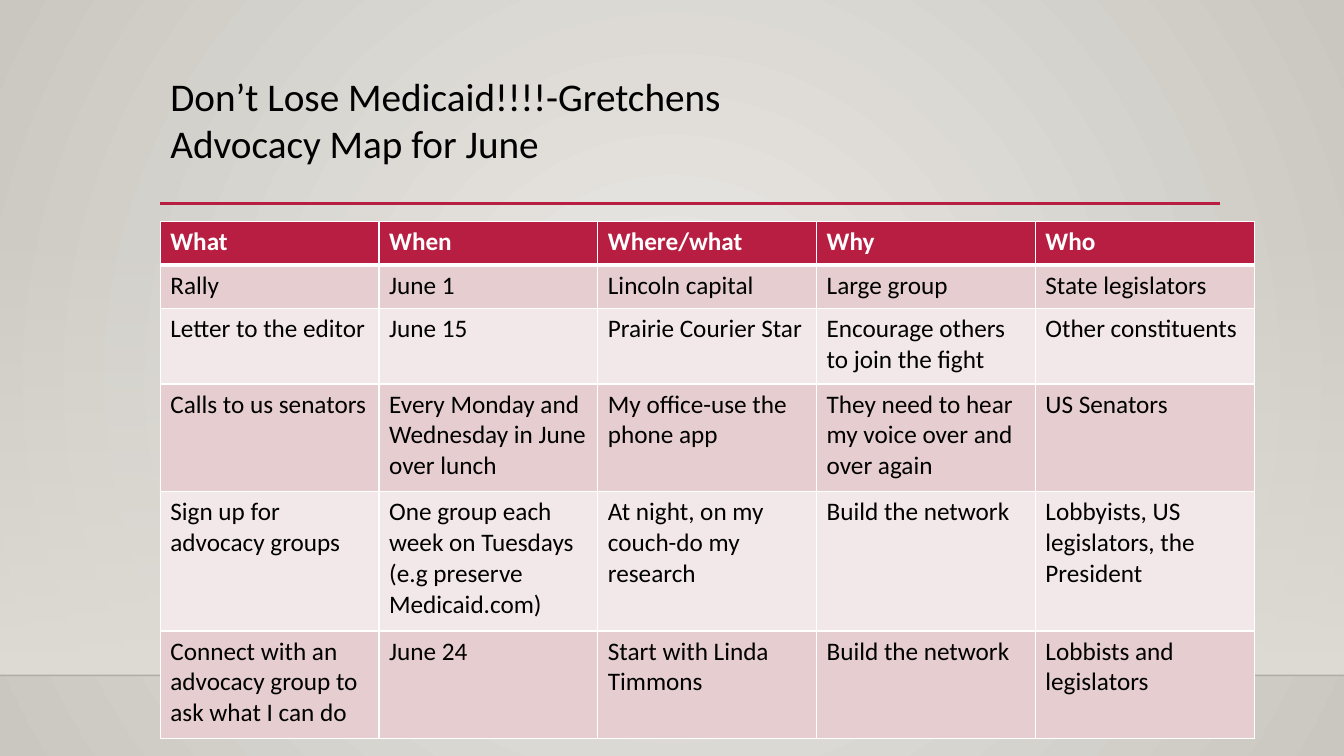
from lxml import etree
from pptx import Presentation
from pptx.dml.color import RGBColor
from pptx.enum.shapes import MSO_CONNECTOR, MSO_SHAPE
from pptx.enum.text import MSO_ANCHOR, MSO_AUTO_SIZE, PP_ALIGN
from pptx.oxml import parse_xml
from pptx.oxml.ns import nsdecls, qn
from pptx.util import Inches, Pt

TITLE = "Don’t Lose Medicaid!!!!-Gretchens Advocacy Map for June"
ROWS = [
    ("What", "When", "Where/what", "Why", "Who"),
    ("Rally", "June 1", "Lincoln capital", "Large group", "State legislators"),
    ("Letter to the editor", "June 15", "Prairie Courier Star",
     "Encourage others to join the fight", "Other constituents"),
    ("Calls to us senators", "Every Monday and Wednesday in June over lunch",
     "My office-use the phone app",
     "They need to hear my voice over and over again", "US Senators"),
    ("Sign up for advocacy groups",
     "One group each week on Tuesdays\n(e.g preserve Medicaid.com)",
     "At night, on my couch-do my research", "Build the network",
     "Lobbyists, US legislators, the President"),
    ("Connect with an advocacy group to ask what I can do", "June 24",
     "Start with Linda Timmons", "Build the network", "Lobbists and legislators"),
]
ROW_HEIGHTS = (0.43, 0.43, 0.75, 1.07, 1.38, 1.07)
COLUMN_WIDTH = 2.17
LEFT = 1.59
WIDTH, HEIGHT = 13.33, 7.5
FLOOR = 6.7
FONT = "Calibri"

CRIMSON = RGBColor(0xB7, 0x1E, 0x42)
PINK = RGBColor(0xE6, 0xCD, 0xCF)
PALE_PINK = RGBColor(0xF3, 0xE8, 0xE9)
WHITE = RGBColor(0xFF, 0xFF, 0xFF)
BLACK = RGBColor(0, 0, 0)
NEAR_BLACK = RGBColor(0, 0, 1)
CENTER_GREY = RGBColor(0xEC, 0xEA, 0xE7)
EDGE_GREY = RGBColor(0xCA, 0xC7, 0xC1)
WALL_GREY = RGBColor(0xDF, 0xDB, 0xD5)

RADIAL = ('<a:path path="circle"><a:fillToRect l="50000" t="50000" '
          'r="50000" b="50000"/></a:path>')
DOWNWARD = '<a:lin ang="5400000" scaled="0"/>'


def set_gradient(properties, stops, direction):
    stop_xml = "".join(
        f'<a:gs pos="{position * 1000}"><a:srgbClr val="{color}">'
        f'<a:alpha val="{alpha * 1000}"/></a:srgbClr></a:gs>'
        for position, color, alpha in stops)
    gradient = parse_xml(f'<a:gradFill {nsdecls("a")} rotWithShape="1">'
                         f'<a:gsLst>{stop_xml}</a:gsLst>{direction}</a:gradFill>')
    solid = properties.find(qn("a:solidFill"))
    properties.replace(solid, gradient)


def add_line(slide, left, right, top, color, width):
    line = slide.shapes.add_connector(
        MSO_CONNECTOR.STRAIGHT, Inches(left), Inches(top), Inches(right), Inches(top))
    line.line.color.rgb = color
    line.line.width = Pt(width)
    etree.SubElement(line._element.spPr, qn("a:effectLst"))
    return line


def set_borders(cell, widths):
    properties = cell._tc.get_or_add_tcPr()
    for index, (side, width) in enumerate(zip("LRTB", widths)):
        properties.insert(index, parse_xml(
            f'<a:ln{side} {nsdecls("a")} w="{Pt(width)}"><a:solidFill>'
            f'<a:srgbClr val="{WHITE}"/></a:solidFill></a:ln{side}>'))


def format_text(text_frame, size, color, bold=False):
    for paragraph in text_frame.paragraphs:
        paragraph.alignment = PP_ALIGN.LEFT
        for run in paragraph.runs:
            run.font.name = FONT
            run.font.size = Pt(size)
            run.font.bold = bold
            run.font.color.rgb = color


def add_backdrop(slide):
    slide.background.fill.solid()
    set_gradient(slide._element.find(".//" + qn("p:bgPr")),
                 [(0, CENTER_GREY, 100), (100, EDGE_GREY, 100)], RADIAL)
    wall = slide.shapes.add_shape(MSO_SHAPE.RECTANGLE, 0, Inches(2.21),
                                  Inches(WIDTH), Inches(FLOOR - 2.21))
    wall.shadow.inherit = False
    wall.line.fill.background()
    wall.fill.solid()
    set_gradient(wall._element.spPr,
                 [(0, WALL_GREY, 0), (100, WALL_GREY, 100)], DOWNWARD)
    floor_line = add_line(slide, 0, WIDTH, FLOOR, NEAR_BLACK, 1)
    color = floor_line._element.find(".//" + qn("a:srgbClr"))
    etree.SubElement(color, qn("a:alpha")).set("val", "20000")
    add_line(slide, LEFT, 12.1, 2.02, CRIMSON, 2.5)


def add_title(slide):
    title = slide.shapes.title
    title.left, title.top = Inches(LEFT), Inches(0.67)
    title.width, title.height = Inches(7.21), Inches(1.04)
    frame = title.text_frame
    frame.text = TITLE
    frame.word_wrap = True
    frame.auto_size = MSO_AUTO_SIZE.SHAPE_TO_FIT_TEXT
    frame.vertical_anchor = MSO_ANCHOR.TOP
    format_text(frame, 28, BLACK)


def add_plan_table(slide):
    columns = len(ROWS[0])
    table = slide.shapes.add_table(
        len(ROWS), columns, Inches(LEFT), Inches(2.2),
        Inches(COLUMN_WIDTH * columns), Inches(sum(ROW_HEIGHTS))).table
    for column in table.columns:
        column.width = Inches(COLUMN_WIDTH)
    for index, texts in enumerate(ROWS):
        header = index == 0
        table.rows[index].height = Inches(ROW_HEIGHTS[index])
        fill = CRIMSON if header else PINK if index % 2 else PALE_PINK
        borders = (1, 1, 3 if index == 1 else 1, 3 if header else 1)
        for cell, text in zip(table.rows[index].cells, texts):
            cell.text = text
            cell.fill.solid()
            cell.fill.fore_color.rgb = fill
            set_borders(cell, borders)
            format_text(cell.text_frame, 18, WHITE if header else BLACK, header)


def main():
    presentation = Presentation()
    presentation.slide_width = Inches(WIDTH)
    presentation.slide_height = Inches(HEIGHT)
    slide = presentation.slides.add_slide(presentation.slide_layouts[5])
    add_backdrop(slide)
    add_title(slide)
    add_plan_table(slide)
    presentation.save("out.pptx")


if __name__ == "__main__":
    main()
